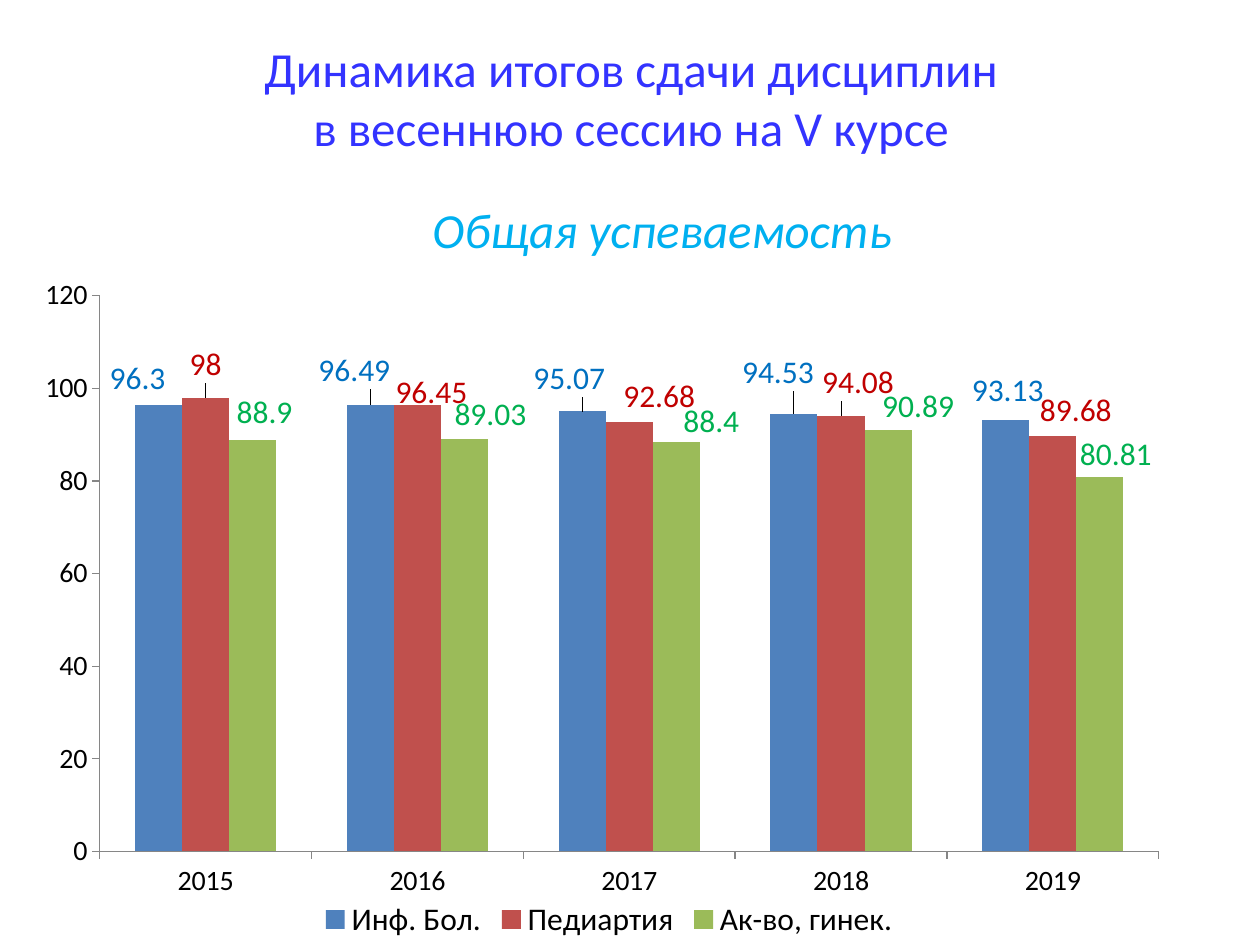
from lxml import etree
from pptx import Presentation
from pptx.chart.data import CategoryChartData
from pptx.dml.color import RGBColor
from pptx.enum.chart import XL_CHART_TYPE, XL_LABEL_POSITION, XL_LEGEND_POSITION, XL_TICK_MARK
from pptx.enum.text import MSO_ANCHOR, MSO_AUTO_SIZE, PP_ALIGN
from pptx.oxml import parse_xml
from pptx.util import Emu, Pt

COLUMNS = XL_CHART_TYPE.COLUMN_CLUSTERED
OUTSIDE_END = XL_LABEL_POSITION.OUTSIDE_END
BOTTOM = XL_LEGEND_POSITION.BOTTOM
TICK_OUT, TICK_NONE = XL_TICK_MARK.OUTSIDE, XL_TICK_MARK.NONE
CENTER, MIDDLE, NO_FIT = PP_ALIGN.CENTER, MSO_ANCHOR.MIDDLE, MSO_AUTO_SIZE.NONE

EMU_PER_PX = 914400 / 126
FONT = "Calibri"
CHART_NS = "http://schemas.openxmlformats.org/drawingml/2006/chart"
COLORS = {
    "title": "3333FF", "subtitle": "00B0F0", "text": "000000", "axis": "868686",
    "blue": "4F81BD", "red": "C0504D", "green": "9BBB59",
    "blue_label": "0070C0", "red_label": "C00000", "green_label": "00B050",
}
YEARS = ["2015", "2016", "2017", "2018", "2019"]
SERIES = [
    ("Инф. Бол.", "blue", [96.3, 96.49, 95.07, 94.53, 93.13],
     [(-21, -3), (-16, -10), (-13, -9), (-16, -17), (2, -6)]),
    ("Педиартия", "red", [98, 96.45, 92.68, 94.08, 89.68],
     [(0, -9), (14, 12), (30, -2), (17, -9), (23, -2)]),
    ("Ак-во, гинек.", "green", [88.9, 89.03, 88.4, 90.89, 80.81],
     [(12, -3), (26, -1), (35, 3), (30, 0), (16, 1)]),
]


def px(length):
    return Emu(round(length * EMU_PER_PX))


def color(name):
    return RGBColor.from_string(COLORS[name])


def style_font(font, size, color_name):
    font.name = FONT
    font.size = Pt(size)
    font.color.rgb = color(color_name)


def place(shape, box):
    shape.left, shape.top, shape.width, shape.height = map(px, box)


def write_heading(shape, box, lines, color_name, italic=False):
    place(shape, box)
    frame = shape.text_frame
    frame.word_wrap = True
    frame.auto_size = NO_FIT
    frame.vertical_anchor = MIDDLE
    for index, line in enumerate(lines):
        paragraph = frame.add_paragraph() if index else frame.paragraphs[0]
        paragraph.alignment = CENTER
        paragraph.space_before = Pt(0)
        run = paragraph.add_run()
        run.text = line
        style_font(run.font, 28, color_name)
        run.font.italic = italic


def manual_layout(**settings):
    layout = parse_xml(f'<c:layout xmlns:c="{CHART_NS}"><c:manualLayout/></c:layout>')
    for tag, value in settings.items():
        etree.SubElement(layout[0], f"{{{CHART_NS}}}{tag}").set("val", str(value))
    return layout


def set_plot_area(chart):
    plot_area = chart.plots[0]._element.getparent()
    for layout in plot_area.findall(f"{{{CHART_NS}}}layout"):
        plot_area.remove(layout)
    plot_area.insert(0, manual_layout(
        layoutTarget="inner", xMode="edge", yMode="edge",
        x=0.061, y=0.048, w=0.913, h=0.815))


def format_axis(axis):
    axis.has_major_gridlines = False
    axis.major_tick_mark = TICK_OUT
    axis.minor_tick_mark = TICK_NONE
    axis.format.line.color.rgb = color("axis")
    style_font(axis.tick_labels.font, 16, "text")


def format_series(series, color_name, offsets, width, height):
    series.format.fill.solid()
    series.format.fill.fore_color.rgb = color(color_name)
    series.invert_if_negative = False
    labels = series.data_labels
    labels.show_value = True
    labels.position = OUTSIDE_END
    style_font(labels.font, 18, color_name + "_label")
    for index, (right, down) in enumerate(offsets):
        label = series.points[index].data_label
        style_font(label.font, 18, color_name + "_label")
        label.position = OUTSIDE_END
        element = labels._element.find(f"{{{CHART_NS}}}dLbl[{index + 1}]")
        element.insert(1, manual_layout(
            x=round(right / width, 4), y=round(down / height, 4)))


def add_results_chart(slide, box):
    data = CategoryChartData()
    data.categories = YEARS
    for name, _, values, _ in SERIES:
        data.add_series(name, values)
    chart = slide.shapes.add_chart(COLUMNS, *map(px, box), data).chart
    style_font(chart.font, 18, "text")
    chart.has_title = False
    chart.has_legend = True
    chart.legend.position = BOTTOM
    chart.legend.include_in_layout = False
    style_font(chart.legend.font, 18, "text")
    format_axis(chart.category_axis)
    format_axis(chart.value_axis)
    chart.value_axis.minimum_scale = 0
    chart.value_axis.maximum_scale = 120
    chart.value_axis.major_unit = 20
    plot = chart.plots[0]
    plot.gap_width = 150
    plot.overlap = 0
    plot.vary_by_categories = False
    for series, (_, color_name, _, offsets) in zip(plot.series, SERIES):
        format_series(series, color_name, offsets, box[2], box[3])
    set_plot_area(chart)


def main():
    presentation = Presentation()
    presentation.slide_width, presentation.slide_height = px(1260), px(945)
    slide = presentation.slides.add_slide(presentation.slide_layouts[5])
    add_results_chart(slide, (29, 263, 1160, 682))
    subtitle_box = (95, 193, 1134, 71)
    subtitle = slide.shapes.add_textbox(*map(px, subtitle_box))
    write_heading(subtitle, subtitle_box, ["Общая успеваемость"], "subtitle", italic=True)
    write_heading(slide.shapes.title, (64, 27, 1134, 141),
                  ["Динамика итогов сдачи дисциплин", "в весеннюю сессию на V курсе"], "title")
    presentation.save("out.pptx")


if __name__ == "__main__":
    main()
